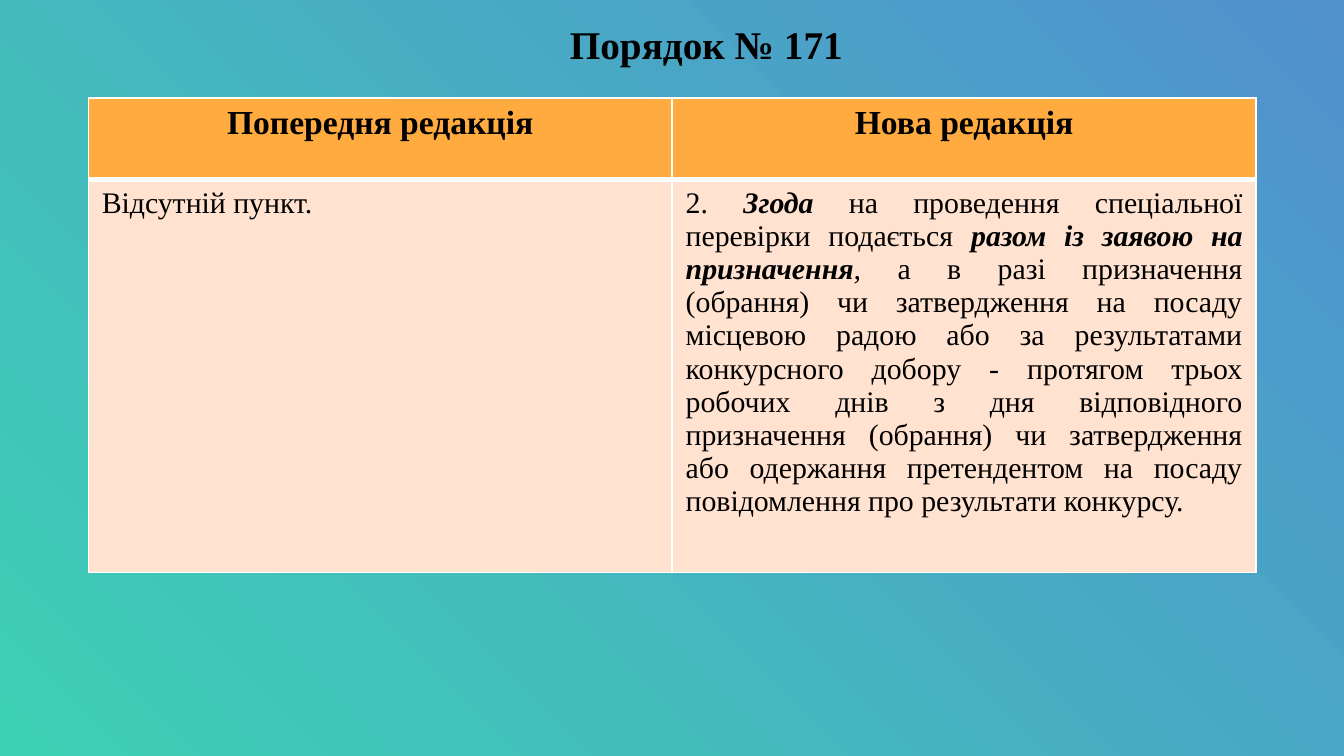
from lxml import etree
from pptx import Presentation
from pptx import util as u
from pptx.dml.color import RGBColor
from pptx.enum import text
from pptx.oxml import ns

FONT = "Times New Roman"
COLORS = {
    "green": "3DD0B4",
    "blue": "5091CE",
    "black": "000000",
    "white": "FFFFFF",
    "header": "FFAB40",
    "body": "FFE2CF",
}
CENTER, LEFT, JUSTIFY = (
    text.PP_ALIGN.CENTER, text.PP_ALIGN.LEFT, text.PP_ALIGN.JUSTIFY)

# Each run is (wording, bold, italic)
HEADERS = ["Попередня редакція", "Нова редакція"]
OLD_EDITION = [("Відсутній пункт.", False, False)]
NEW_EDITION = [
    ("2. ", False, False),
    ("Згода", True, True),
    (" на проведення спеціальної перевірки подається ", False, False),
    ("разом із заявою на призначення", True, True),
    (", ", False, True),
    ("а в разі призначення (обрання) чи затвердження на посаду місцевою "
     "радою або за результатами конкурсного добору - протягом трьох робочих "
     "днів з дня відповідного призначення (обрання) чи затвердження або "
     "одержання претендентом на посаду повідомлення про результати конкурсу.",
     False, False),
]


def color(name):
    return RGBColor.from_string(COLORS[name])


def format_run(run, size, bold, italic=False):
    run.font.name = FONT
    run.font.size = u.Pt(size)
    run.font.bold = bold
    run.font.italic = italic
    run.font.color.rgb = color("black")


def set_background(slide):
    fill = slide.background.fill
    fill.gradient()
    fill.gradient_angle = 45
    for stop, name in zip(fill.gradient_stops, ("green", "blue")):
        stop.color.rgb = color(name)


def add_title(slide, wording):
    title = slide.shapes.title
    title.left, title.top = u.Cm(0.61), u.Cm(0)
    title.width, title.height = u.Cm(24.21), u.Cm(3.02)
    frame = title.text_frame
    frame.text = wording
    frame.word_wrap = True
    frame.auto_size = text.MSO_AUTO_SIZE.NONE
    frame.vertical_anchor = text.MSO_ANCHOR.TOP
    frame.margin_left = frame.margin_right = u.Cm(0.25)
    frame.margin_top = frame.margin_bottom = u.Cm(0.25)
    paragraph = frame.paragraphs[0]
    paragraph.alignment = CENTER
    paragraph.line_spacing = 1.15
    paragraph.space_before = u.Pt(0)
    paragraph.space_after = u.Pt(8)
    # First-line indent
    properties = paragraph._p.get_or_add_pPr()
    properties.set("marL", "0")
    properties.set("indent", str(u.Cm(1.27)))
    format_run(paragraph.runs[0], 21, True)


def set_borders(cell, widths):
    """Draw white borders; widths are points for left, right, top, bottom."""
    properties = cell._tc.get_or_add_tcPr()
    for index, (side, width) in enumerate(zip("LRTB", widths)):
        line = etree.Element(ns.qn(f"a:ln{side}"), w=str(u.Pt(width)))
        fill = etree.SubElement(line, ns.qn("a:solidFill"))
        etree.SubElement(fill, ns.qn("a:srgbClr"), val=COLORS["white"])
        properties.insert(index, line)


def fill_cell(cell, runs, size, alignment, fill, borders):
    cell.fill.solid()
    cell.fill.fore_color.rgb = color(fill)
    set_borders(cell, borders)
    paragraph = cell.text_frame.paragraphs[0]
    paragraph.alignment = alignment
    for wording, bold, italic in runs:
        run = paragraph.add_run()
        run.text = wording
        format_run(run, size, bold, italic)


def add_comparison_table(slide):
    table = slide.shapes.add_table(
        2, 2, u.Cm(1.67), u.Cm(1.85), u.Cm(22.07), u.Cm(8.97)).table
    table.rows[0].height = u.Cm(1.55)
    table.rows[1].height = u.Cm(7.42)

    # Header row
    for column, header in enumerate(HEADERS):
        fill_cell(table.cell(0, column), [(header, True, False)], 18,
                  CENTER, "header", (1, 1, 1, 3))

    # Editions side by side
    editions = [(OLD_EDITION, LEFT), (NEW_EDITION, JUSTIFY)]
    for column, (runs, alignment) in enumerate(editions):
        fill_cell(table.cell(1, column), runs, 16,
                  alignment, "body", (1, 1, 3, 1))


def main():
    presentation = Presentation()
    presentation.slide_width = u.Cm(25.4)
    presentation.slide_height = u.Cm(14.29)
    slide = presentation.slides.add_slide(presentation.slide_layouts[5])
    set_background(slide)
    add_title(slide, "Порядок № 171")
    add_comparison_table(slide)
    presentation.save("out.pptx")


if __name__ == "__main__":
    main()
